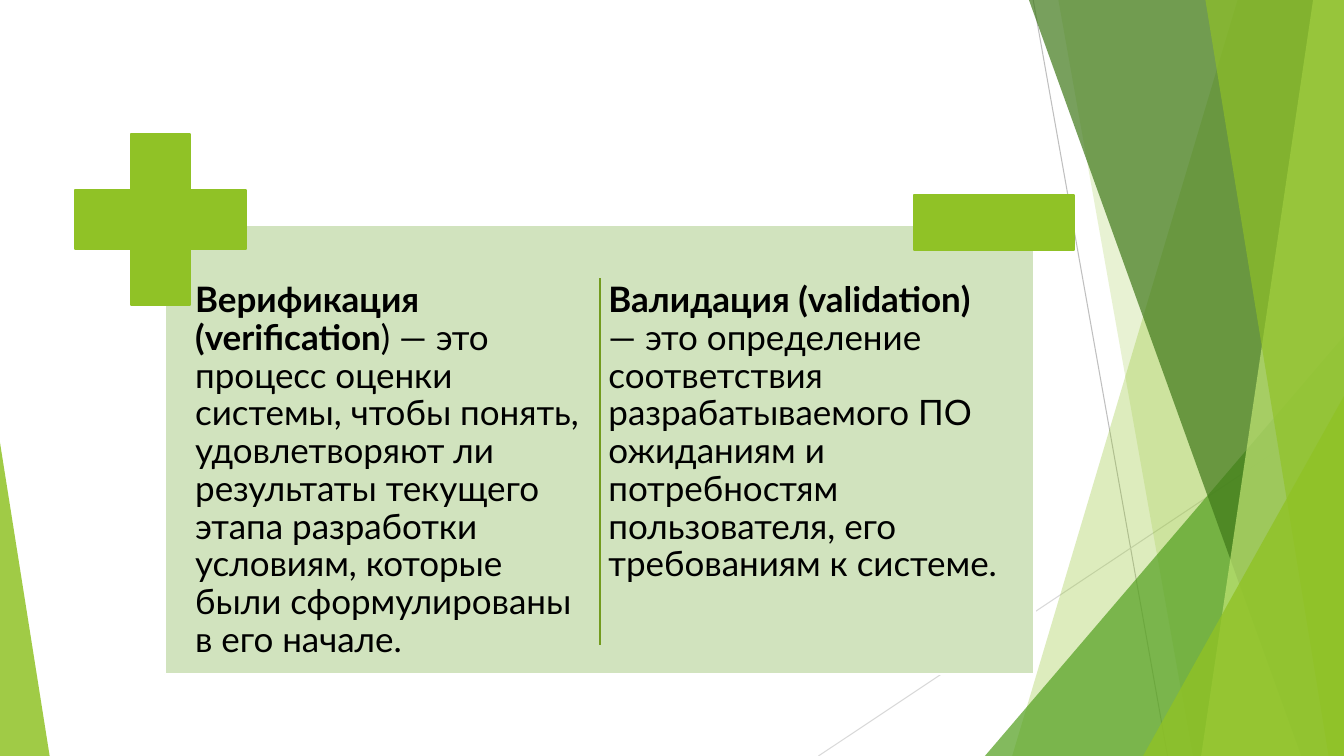
import pptx
import pptx.util
import pptx.dml.color
import pptx.enum.shapes
import pptx.enum.text
import pptx.oxml
import pptx.oxml.ns
from dataclasses import dataclass

Pt = pptx.util.Pt
SHAPE = pptx.enum.shapes.MSO_SHAPE
qn = pptx.oxml.ns.qn


@dataclass(frozen=True)
class Theme:
    lime: str = "90C226"
    green: str = "54A021"
    forest: str = "3F7819"
    pale: str = "C0E474"
    panel: str = "D1E3BE"
    divider: str = "739B1E"
    white: str = "FFFFFF"
    text: str = "000000"
    grey: str = "BFBFBF"
    light_grey: str = "D9D9D9"
    font: str = "Lato"
    size: float = 25
    outline: float = 1.5
    hairline: float = 0.75


THEME = Theme()
COLUMNS = [
    ("Верификация (verification",
     ") — это процесс оценки системы, чтобы понять, удовлетворяют ли результаты "
     "текущего этапа разработки условиям, которые были сформулированы в его начале."),
    ("Валидация (validation) ",
     "— это определение соответствия разрабатываемого ПО ожиданиям и потребностям "
     "пользователя, его требованиям к системе."),
]


def rgb(color):
    return pptx.dml.color.RGBColor.from_string(color)


def set_attrs(obj, values):
    for name, value in values.items():
        setattr(obj, name, value)


def append_tag(parent, tag, **attrs):
    child = pptx.oxml.parse_xml(f"<a:{tag} {pptx.oxml.ns.nsdecls('a')}/>")
    for name, value in attrs.items():
        child.set(name, str(value))
    parent.append(child)


def paint(sp, fill, line=None, opacity=100):
    sp.shadow.inherit = False
    sp.fill.solid()
    sp.fill.fore_color.rgb = rgb(fill)
    if opacity < 100:
        clr = sp.element.spPr.find(qn("a:solidFill"))[0]
        append_tag(clr, "alpha", val=opacity * 1000)
    if line:
        sp.line.color.rgb = rgb(line)
        sp.line.width = Pt(THEME.outline)
    else:
        sp.line.fill.background()


def add_block(s, kind, box, fill, line=None, opacity=100, adj=None):
    sp = s.shapes.add_shape(kind, *map(Pt, box))
    if adj is not None:
        sp.adjustments[0] = adj
    paint(sp, fill, line, opacity)


def add_rule(s, start, end, color, width):
    ln = s.shapes.add_connector(
        pptx.enum.shapes.MSO_CONNECTOR.STRAIGHT, *map(Pt, start + end))
    ln.line.color.rgb = rgb(color)
    ln.line.width = Pt(width)
    append_tag(ln.element.spPr, "effectLst")


def add_band(s, box, top_x, bottom_x, fill, opacity):
    left, top, width, height = box
    right, bottom = left + width, top + height
    fb = s.shapes.build_freeform(Pt(left + top_x), Pt(top), scale=1.0)
    fb.add_line_segments([(Pt(x), Pt(y)) for x, y in (
        (right, top), (right, bottom), (left + bottom_x, bottom))], close=True)
    paint(fb.convert_to_shape(), fill, opacity=opacity)


def add_corner(s, box, width, height, fill, opacity, side):
    left, top, full_width, full_height = box
    x = left + side * (full_width - width)
    add_block(s, SHAPE.ISOSCELES_TRIANGLE, (x, top + full_height - height, width, height),
              fill, opacity=opacity, adj=side)


def draw_backdrop(s, box):
    left, top, width, height = box
    right, bottom = left + width, top + height
    add_rule(s, (left + 738, top), (left + 834, bottom), THEME.grey, THEME.hairline)
    add_rule(s, (right, top + 290), (left + 584.6, bottom), THEME.light_grey, THEME.hairline)
    add_band(s, box, 884, 723, THEME.lime, 30)
    add_band(s, box, 756, 852, THEME.lime, 20)
    add_corner(s, box, 256.5, 300, THEME.green, 72, side=1)
    add_band(s, box, 735, 929.5, THEME.forest, 70)
    add_band(s, box, 938, 858, THEME.pale, 70)
    add_band(s, box, 861, 949, THEME.lime, 65)
    add_corner(s, box, 143.5, 257, THEME.lime, 80, side=1)
    add_corner(s, box, 35.5, 224, THEME.lime, 85, side=0)


def fill_column(sp, box, term, definition):
    sp.element.getparent().append(sp.element)
    set_attrs(sp, dict(zip(("left", "top", "width", "height"), map(Pt, box))))
    tf = sp.text_frame
    set_attrs(tf, {
        "word_wrap": True,
        "auto_size": pptx.enum.text.MSO_AUTO_SIZE.NONE,
        "vertical_anchor": pptx.enum.text.MSO_ANCHOR.TOP,
        **{f"margin_{edge}": Pt(3.6) for edge in ("left", "top", "right", "bottom")},
    })
    p = tf.paragraphs[0]
    set_attrs(p, {"line_spacing": 0.9, "space_before": Pt(0), "space_after": Pt(8.75),
                  "alignment": pptx.enum.text.PP_ALIGN.LEFT})
    pPr = p._p.get_or_add_pPr()
    pPr.set("marL", "0")
    pPr.set("indent", "0")
    append_tag(pPr, "buNone")
    for text, bold in ((term, True), (definition, False)):
        r = p.add_run()
        r.text = text
        set_attrs(r.font, {"name": THEME.font, "size": Pt(THEME.size), "bold": bold})
        r.font.color.rgb = rgb(THEME.text)


def draw_comparison(s, box, bodies):
    left, top, width, height = box
    middle = left + width / 2
    add_block(s, SHAPE.RECTANGLE, box, THEME.panel, THEME.white)
    col_width, gap = 288.7, 6.5
    column_lefts = (middle - gap / 2 - col_width - 0.5, middle + gap / 2 - 0.5)
    for sp, x, column in zip(bodies, column_lefts, COLUMNS):
        fill_column(sp, (x, top + 37.4, col_width, 275), *column)
    add_block(s, SHAPE.CROSS, (left - 64, top - 65, 122, 122),
              THEME.lime, THEME.lime, adj=0.328)
    add_block(s, SHAPE.RECTANGLE, (left + width - 86, top - 21, 114.5, 39),
              THEME.lime, THEME.lime)
    add_rule(s, (middle, top + 38), (middle, top + 300), THEME.divider, THEME.outline)


def main():
    prs = pptx.Presentation()
    set_attrs(prs, {"slide_width": Pt(960), "slide_height": Pt(540)})
    s = prs.slides.add_slide(prs.slide_layouts[3])
    title, *bodies = list(s.placeholders)
    title.element.getparent().remove(title.element)
    draw_backdrop(s, (0, 0, 960, 540))
    draw_comparison(s, (117.6, 160.6, 621.4, 321), bodies)
    prs.save("out.pptx")


if __name__ == "__main__":
    main()
